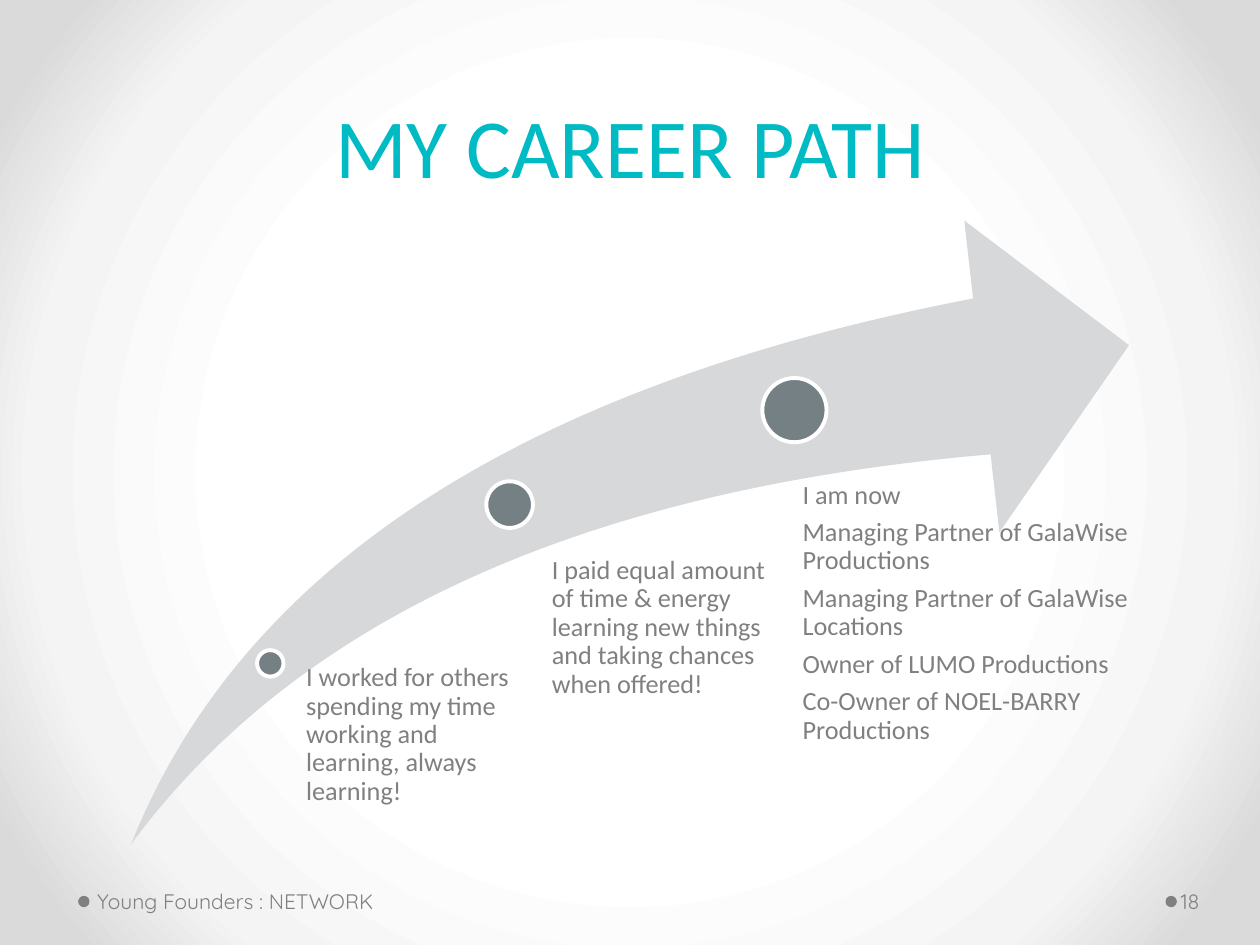
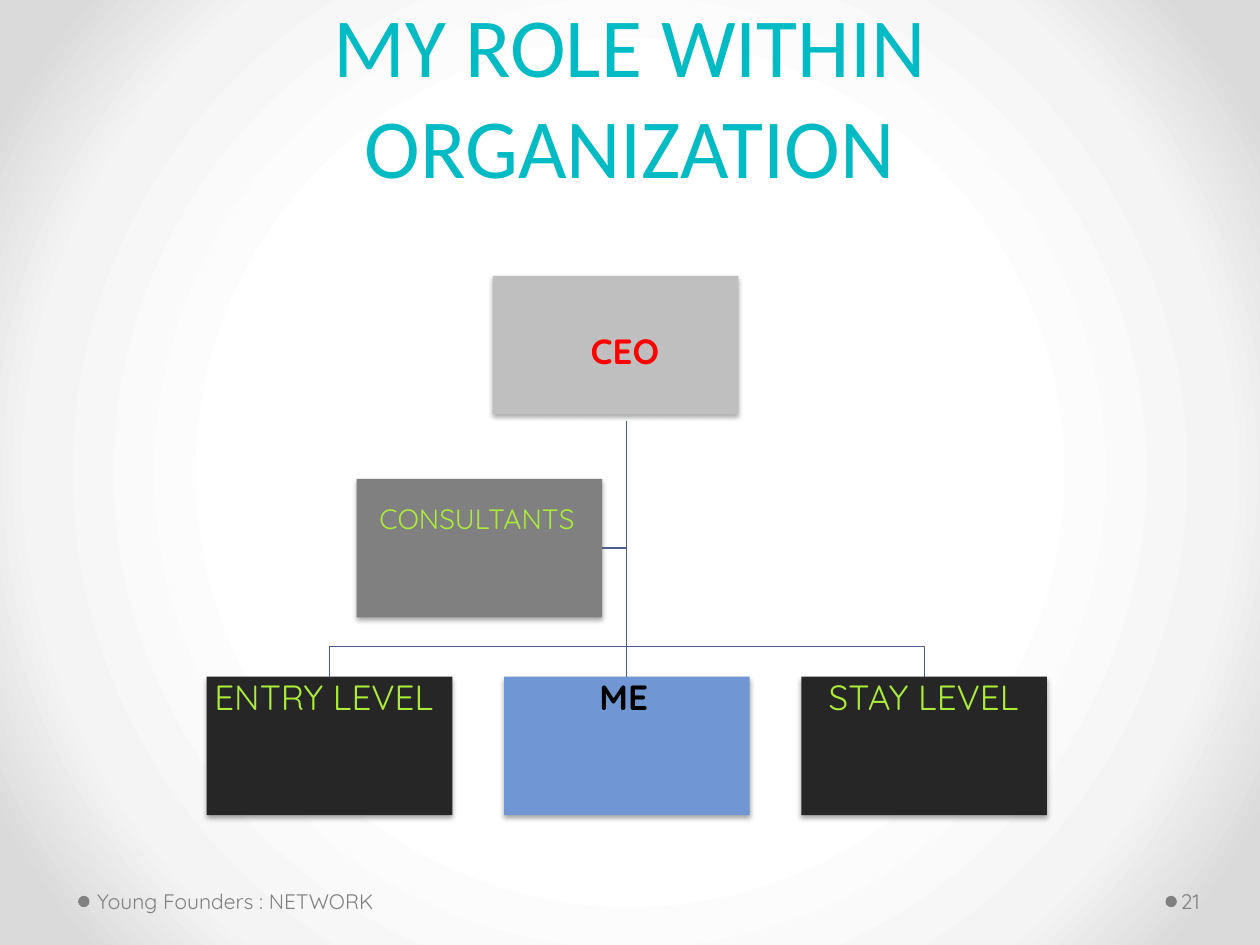
from dataclasses import dataclass

from lxml import etree
from pptx import Presentation, oxml, util as u
from pptx.dml.color import RGBColor
from pptx.enum import shapes, text
from pptx.oxml import ns

COLOURS = {
    "title": "00BAC4",
    "grey": "808080",
    "arrow": "D6D8D9",
    "milestone": "758085",
    "white": "FFFFFF",
    "line": "4A5B8E",
    "silver": "BFBFBF",
    "charcoal": "262626",
    "blue": "7097D3",
    "red": "FF0000",
    "lime": "AAEC39",
    "black": "000000",
}
BACKDROP_STOPS = ((50, "FFFFFF"), (76, "F4F4F4"), (92, "DADADA"))
HEADING_FONT = "Calibri"
LABEL_FONT = "Quicksand"
LABEL_INSETS = (0.05, 0.05, 0.1, 0.05)
ROLE_WIDTH, ROLE_HEIGHT = 1.95, 1.1
LABEL_HEIGHT = 0.94
TRUNK_TOP, BUS_TOP = 3.34, 5.13


@dataclass
class Style:
    size: float
    colour: str
    font: str = LABEL_FONT
    bold: bool = False
    align: text.PP_ALIGN = text.PP_ALIGN.LEFT
    line_spacing: object = None
    space_after: float = 0


@dataclass
class Milestone:
    left: float
    top: float
    diameter: float
    note_area: tuple[float, float, float, float]
    inset: float
    lines: tuple[str, ...]


@dataclass
class Role:
    label: str
    left: float
    top: float
    fill: str
    label_left: float
    label_top: float
    colour: str
    label_width: float = 2.13
    size: float = 20
    bold: bool = False


TITLE = Style(48, "title", HEADING_FONT, align=text.PP_ALIGN.CENTER, line_spacing=u.Pt(58))
NOTE = Style(15, "grey", HEADING_FONT, line_spacing=0.9, space_after=5.25)
FOOTER = Style(12, "grey")

MILESTONES = (
    Milestone(2.04, 5.16, 0.21, (2.32, 5.27, 1.85, 1.43), 0.11, (
        "I worked for others spending my time working and learning, always learning!",
    )),
    Milestone(3.86, 3.82, 0.37, (4.18, 4.42, 1.9, 1.87), 0.2, (
        "I paid equal amount of time & energy learning new things and taking chances when offered!",
    )),
    Milestone(6.05, 3, 0.51, (6.1, 3.82, 3.4, 2.62), 0.27, (
        "I am now",
        "Managing Partner of GalaWise Productions",
        "Managing Partner of GalaWise Locations",
        "Owner of LUMO Productions",
        "Co-Owner of NOEL-BARRY Productions",
    )),
)

CEO = Role("CEO", 3.91, 2.19, "silver", 3.92, 2.31, "red", bold=True)
CONSULTANTS = Role("CONSULTANTS", 2.83, 3.8, "grey", 2.64, 3.64, "lime", 2.34, 16)
LEVELS = tuple(
    Role(label, 1.64 + 2.36 * column, 5.37, fill, 1.53 + 2.38 * column, 5.06, colour, bold=bold)
    for column, (label, fill, colour, bold) in enumerate((
        ("ENTRY LEVEL", "charcoal", "lime", False),
        ("ME", "blue", "black", True),
        ("STAY LEVEL", "charcoal", "lime", False),
    ))
)


def rgb(name: str) -> RGBColor:
    return RGBColor.from_string(COLOURS[name])


def paint_backdrop(deck) -> None:
    master = deck.slide_master
    master.background.fill.gradient()
    gradient = master.element.find(".//" + ns.qn("a:gradFill"))
    stops = "".join(
        f'<a:gs pos="{position * 1000}"><a:srgbClr val="{colour}"/></a:gs>'
        for position, colour in BACKDROP_STOPS
    )
    replacement = oxml.parse_xml(
        f'<a:gradFill {ns.nsdecls("a")} rotWithShape="1"><a:gsLst>{stops}</a:gsLst>'
        '<a:path path="circle"><a:fillToRect l="50000" t="50000" r="50000" b="50000"/>'
        "</a:path></a:gradFill>"
    )
    gradient.getparent().replace(gradient, replacement)


def add_text(page, area, lines, style: Style, insets=(0.1, 0.05, 0.1, 0.05),
             anchor=text.MSO_ANCHOR.MIDDLE) -> None:
    box = page.shapes.add_textbox(*map(u.Inches, area))
    frame = box.text_frame
    frame.word_wrap = True
    frame.vertical_anchor = anchor
    frame.margin_left, frame.margin_top, frame.margin_right, frame.margin_bottom = map(u.Inches, insets)
    frame.text = "\n".join(lines)
    for para in frame.paragraphs:
        para.alignment = style.align
        para.space_after = u.Pt(style.space_after)
        if style.line_spacing:
            para.line_spacing = style.line_spacing
        for span in para.runs:
            span.font.name = style.font
            span.font.size = u.Pt(style.size)
            span.font.bold = style.bold
            span.font.color.rgb = rgb(style.colour)


def add_filled(page, kind, area, colour: str):
    shape = page.shapes.add_shape(kind, *map(u.Inches, area))
    shape.shadow.inherit = False
    shape.fill.solid()
    shape.fill.fore_color.rgb = rgb(colour)
    shape.line.fill.background()
    return shape


def add_page(deck, title: str, number: str):
    page = deck.slides.add_slide(deck.slide_layouts[6])
    for left in (0.62, 9.25):
        add_filled(page, shapes.MSO_SHAPE.OVAL, (left, 7.11, 0.09, 0.09), "grey")
    add_text(page, (0.5, 0.15, 9, 1.45), [title], TITLE, anchor=text.MSO_ANCHOR.BOTTOM)
    add_text(page, (0.72, 6.95, 3.11, 0.4), ["Young Founders : NETWORK"], FOOTER, LABEL_INSETS)
    add_text(page, (9.34, 6.95, 0.61, 0.4), [number], FOOTER, (0.03, 0.05, 0.05, 0.05))
    return page


def add_milestone(page, milestone: Milestone) -> None:
    area = (milestone.left, milestone.top, milestone.diameter, milestone.diameter)
    marker = add_filled(page, shapes.MSO_SHAPE.OVAL, area, "milestone")
    marker.line.color.rgb = rgb("white")
    marker.line.width = u.Pt(2.25)
    add_text(page, milestone.note_area, milestone.lines, NOTE,
             (milestone.inset, 0, 0, 0), text.MSO_ANCHOR.TOP)


def add_role(page, role: Role):
    area = (role.left, role.top, ROLE_WIDTH, ROLE_HEIGHT)
    box = add_filled(page, shapes.MSO_SHAPE.RECTANGLE, area, role.fill)
    effects = box.element.spPr.find(ns.qn("a:effectLst"))
    effects.append(oxml.parse_xml(
        f'<a:outerShdw {ns.nsdecls("a")} blurRad="{u.Pt(3.1)}" dist="{u.Pt(1.8)}" '
        'dir="5400000" rotWithShape="0"><a:srgbClr val="000000">'
        '<a:alpha val="35000"/></a:srgbClr></a:outerShdw>'
    ))
    style = Style(role.size, role.colour, bold=role.bold, align=text.PP_ALIGN.CENTER)
    add_text(page, (role.label_left, role.label_top, role.label_width, LABEL_HEIGHT),
             [role.label], style, LABEL_INSETS)
    return box


def style_line(line) -> None:
    line.color.rgb = rgb("line")
    line.width = u.Pt(0.75)


def add_trunk(page, start, box) -> None:
    trunk = page.shapes.add_connector(shapes.MSO_CONNECTOR.STRAIGHT, *start, start[0], box.top)
    style_line(trunk.line)
    etree.SubElement(trunk.element.spPr, ns.qn("a:effectLst"))
    trunk.end_connect(box, 0)


def add_branch(page, start, *corners) -> None:
    builder = page.shapes.build_freeform(*start)
    builder.add_line_segments(corners, close=False)
    branch = builder.convert_to_shape()
    branch.shadow.inherit = False
    branch.fill.background()
    style_line(branch.line)


def build_career_path(deck) -> None:
    page = add_page(deck, "MY CAREER PATH", "18")
    arrow = add_filled(page, shapes.MSO_SHAPE.SWOOSH_ARROW, (1.04, 1.75, 7.92, 4.95), "arrow")
    arrow.adjustments[0] = 0.25
    arrow.adjustments[1] = 0.25
    for milestone in MILESTONES:
        add_milestone(page, milestone)


def build_organization(deck) -> None:
    page = add_page(deck, "MY ROLE WITHIN ORGANIZATION", "21")
    add_role(page, CEO)
    consultants = add_role(page, CONSULTANTS)
    entry, me, stay = [add_role(page, role) for role in LEVELS]
    trunk = me.left + me.width // 2
    start = (trunk, u.Inches(TRUNK_TOP))
    bus = u.Inches(BUS_TOP)
    middle = consultants.top + consultants.height // 2
    add_branch(page, start, (trunk, middle), (consultants.left + consultants.width, middle))
    for box in (stay, entry):
        centre = box.left + box.width // 2
        add_branch(page, start, (trunk, bus), (centre, bus), (centre, box.top))
    add_trunk(page, start, me)


def main() -> None:
    deck = Presentation()
    deck.slide_width = u.Inches(10)
    deck.slide_height = u.Inches(7.5)
    paint_backdrop(deck)
    build_career_path(deck)
    build_organization(deck)
    deck.save("out.pptx")


if __name__ == "__main__":
    main()
